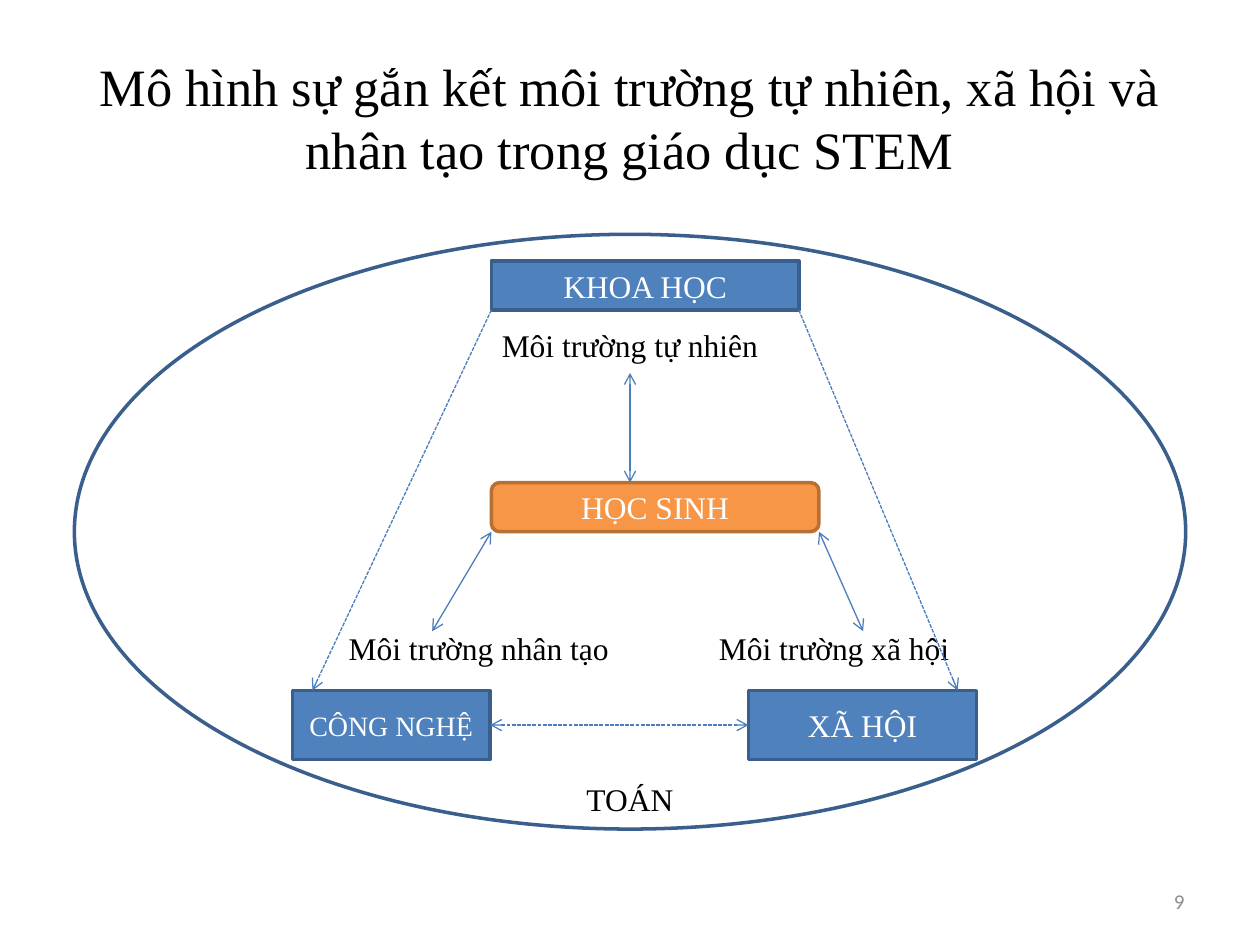
from lxml.etree import SubElement
from pptx import Presentation
from pptx.dml.color import RGBColor
from pptx.enum.dml import MSO_LINE
from pptx.enum.shapes import MSO_CONNECTOR, MSO_SHAPE
from pptx.enum.text import MSO_ANCHOR, MSO_AUTO_SIZE, PP_ALIGN
from pptx.oxml.ns import qn
from pptx.util import Inches, Pt

BLACK = RGBColor(0x00, 0x00, 0x00)
WHITE = RGBColor(0xFF, 0xFF, 0xFF)
BLUE = RGBColor(0x4F, 0x81, 0xBD)
DARK_BLUE = RGBColor(0x3A, 0x5F, 0x8C)
ARROW_BLUE = RGBColor(0x4B, 0x7E, 0xBC)
ORANGE = RGBColor(0xF7, 0x96, 0x46)
DARK_ORANGE = RGBColor(0xB7, 0x6F, 0x34)
GREY = RGBColor(0x8C, 0x8C, 0x8C)


class Diagram:
    font = "Times New Roman"
    size = 18

    def __init__(self, prs):
        self.s = prs.slides.add_slide(prs.slide_layouts[5])

    def set_text(self, sp, text, color, size=None, align=PP_ALIGN.CENTER, font=None):
        tf = sp.text_frame
        tf.text = text
        tf.word_wrap = True
        tf.auto_size = MSO_AUTO_SIZE.NONE
        tf.vertical_anchor = MSO_ANCHOR.MIDDLE
        p = tf.paragraphs[0]
        p.alignment = align
        f = p.runs[0].font
        f.name = font or self.font
        f.size = Pt(size or self.size)
        f.color.rgb = color

    def title(self, text, x, y, w, h):
        sp = self.s.shapes.title
        sp.left, sp.top, sp.width, sp.height = map(Inches, (x, y, w, h))
        self.set_text(sp, text, BLACK, 30)

    def shape(self, kind, x, y, w, h, fill, line):
        sp = self.s.shapes.add_shape(kind, *map(Inches, (x, y, w, h)))
        sp.shadow.inherit = False
        sp.fill.solid()
        sp.fill.fore_color.rgb = fill
        sp.line.color.rgb = line
        sp.line.width = Pt(2)
        return sp

    def box(self, text, x, y, w, h, kind=MSO_SHAPE.RECTANGLE, fill=BLUE, line=DARK_BLUE, size=None):
        sp = self.shape(kind, x, y, w, h, fill, line)
        self.set_text(sp, text, WHITE, size)
        return sp

    def label(self, text, x, y, w, h, color=BLACK, **style):
        sp = self.s.shapes.add_textbox(*map(Inches, (x, y, w, h)))
        self.set_text(sp, text, color, **style)

    def arrow(self, start, end, dashed=False, both=True):
        points = map(Inches, (*start, *end))
        cx = self.s.shapes.add_connector(MSO_CONNECTOR.STRAIGHT, *points)
        cx.line.color.rgb = ARROW_BLUE
        cx.line.width = Pt(0.75)
        if dashed:
            cx.line.dash_style = MSO_LINE.SQUARE_DOT
        sp_pr = cx._element.spPr
        ln = sp_pr.find(qn("a:ln"))
        for end_tag in ("a:headEnd", "a:tailEnd") if both else ("a:tailEnd",):
            SubElement(ln, qn(end_tag), type="arrow")
        SubElement(sp_pr, qn("a:effectLst"))
        return cx


def main():
    prs = Presentation()
    prs.slide_width, prs.slide_height = Inches(10), Inches(7.5)
    d = Diagram(prs)

    d.title("Mô hình sự gắn kết môi trường tự nhiên, xã hội và nhân tạo trong giáo dục STEM",
            0.5, 0.3, 9, 1.25)
    d.shape(MSO_SHAPE.OVAL, 0.59, 1.86, 8.82, 4.72, WHITE, DARK_BLUE)

    for text, center, middle in (
        ("Môi trường tự nhiên", 5, 2.74),
        ("Môi trường nhân tạo", 3.8, 5.14),
        ("Môi trường xã hội", 6.62, 5.14),
        ("TOÁN", 5, 6.34),
    ):
        d.label(text, center - 1.25, middle - 0.2, 2.5, 0.4)

    d.box("KHOA HỌC", 3.9, 2.07, 2.44, 0.39)
    d.box("HỌC SINH", 3.9, 3.83, 2.6, 0.39, MSO_SHAPE.ROUNDED_RECTANGLE, ORANGE, DARK_ORANGE)
    technology = d.box("CÔNG NGHỆ", 2.32, 5.48, 1.57, 0.55, size=16)
    society = d.box("XÃ HỘI", 5.94, 5.48, 1.81, 0.55)

    d.arrow((3.9, 2.46), (2.48, 5.48), dashed=True, both=False)
    d.arrow((6.34, 2.46), (7.6, 5.48), dashed=True, both=False)
    d.arrow((5, 2.96), (5, 3.83))
    d.arrow((3.9, 4.22), (3.43, 5.01))
    d.arrow((6.5, 4.22), (6.85, 5.01))
    link = d.arrow((3.89, 5.76), (5.94, 5.76), dashed=True)
    link.begin_connect(technology, 3)
    link.end_connect(society, 1)

    d.label("9", 7.17, 6.95, 2.33, 0.4, GREY, size=12, align=PP_ALIGN.RIGHT, font="Calibri")
    prs.save("out.pptx")


if __name__ == "__main__":
    main()
